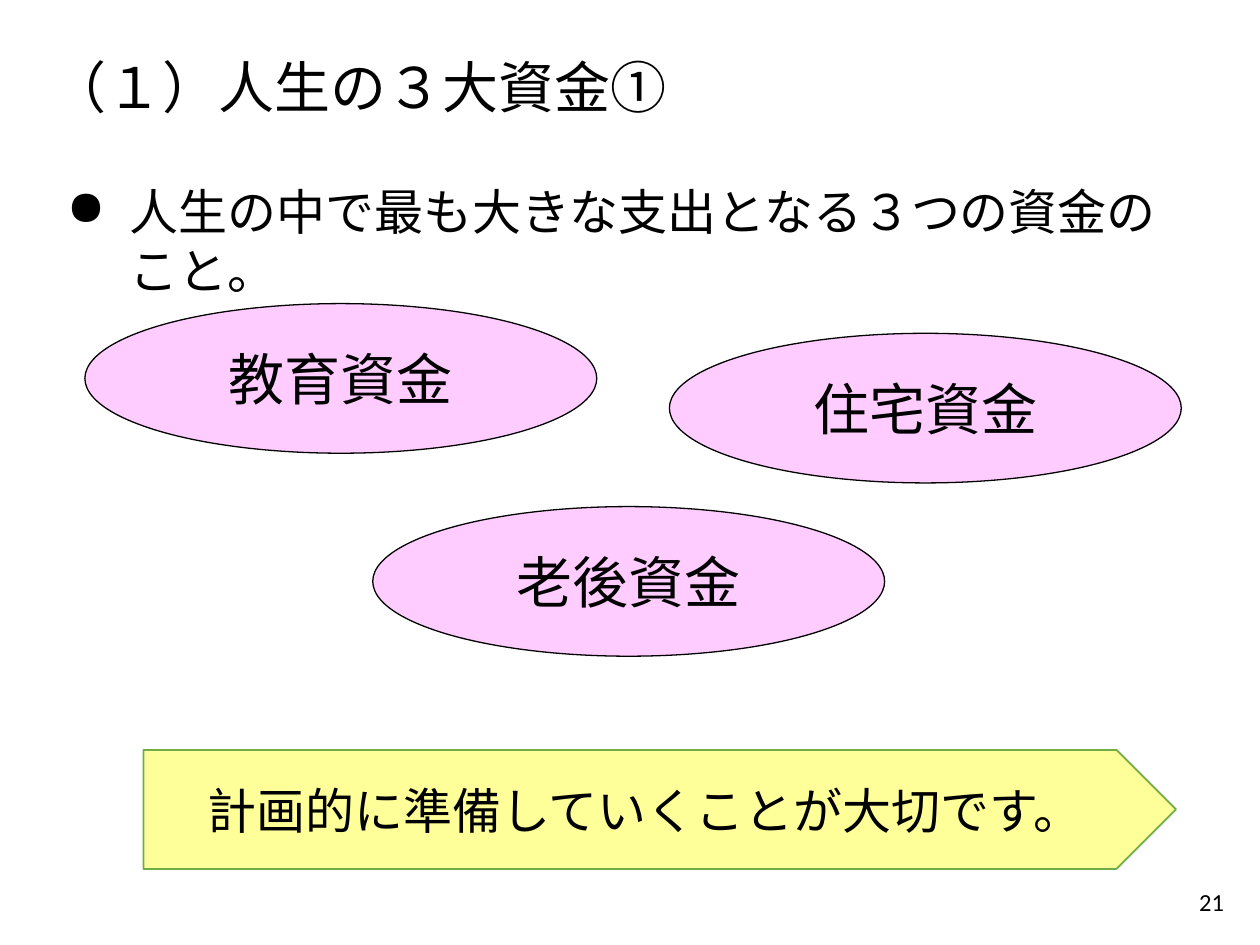
from lxml import etree
from pptx import Presentation
from pptx.dml.color import RGBColor
from pptx.enum.shapes import MSO_SHAPE
from pptx.enum.text import MSO_ANCHOR, MSO_AUTO_SIZE, PP_ALIGN
from pptx.oxml.ns import qn
from pptx.util import Pt

LEFT, CENTER, RIGHT = PP_ALIGN.LEFT, PP_ALIGN.CENTER, PP_ALIGN.RIGHT
TOP, MIDDLE = MSO_ANCHOR.TOP, MSO_ANCHOR.MIDDLE
ELLIPSE, ARROW_BANNER = MSO_SHAPE.OVAL, MSO_SHAPE.PENTAGON
NO_AUTOFIT = MSO_AUTO_SIZE.NONE
TITLE_ONLY = 5

COLORS = {
    "text": "000000",
    "fund": "FFCCFF",
    "fund_line": "000000",
    "banner": "FFFF99",
    "banner_line": "70AD47",
}


def color(name):
    return RGBColor.from_string(COLORS[name])


def write(shape, text, *, size, font="Arial", align=LEFT, anchor=MIDDLE, wrap=True):
    frame = shape.text_frame
    frame.auto_size = NO_AUTOFIT
    frame.word_wrap = wrap
    frame.vertical_anchor = anchor
    paragraph = frame.paragraphs[0]
    paragraph.alignment = align
    run = paragraph.add_run()
    run.text = text
    run.font.size = Pt(size)
    run.font.name = font
    run.font.color.rgb = color("text")
    return paragraph


def add_filled(slide, kind, box, fill, line, line_width):
    shape = slide.shapes.add_shape(kind, *map(Pt, box))
    shape.shadow.inherit = False
    shape.fill.solid()
    shape.fill.fore_color.rgb = color(fill)
    shape.line.color.rgb = color(line)
    shape.line.width = Pt(line_width)
    return shape


def place_title(slide, box, text):
    title = slide.shapes.title
    title.left, title.top, title.width, title.height = map(Pt, box)
    write(title, text, size=32)


def add_definition(slide, box, text, indent=36):
    definition = slide.shapes.add_textbox(*map(Pt, box))
    paragraph = write(definition, text, size=28, anchor=TOP)
    properties = paragraph._p.get_or_add_pPr()
    properties.set("marL", str(Pt(indent)))
    properties.set("indent", str(-Pt(indent)))
    etree.SubElement(properties, qn("a:buChar")).set("char", "●")


def add_funds(slide, box, funds, size=(292.5, 85.5)):
    left, top = box[:2]
    for name, (dx, dy) in funds.items():
        fund = add_filled(slide, ELLIPSE, (left + dx, top + dy, *size),
                          "fund", "fund_line", 0.75)
        write(fund, name, size=32, align=CENTER, wrap=False)


def add_banner(slide, box, text):
    banner = add_filled(slide, ARROW_BANNER, box, "banner", "banner_line", 1)
    write(banner, text, size=28, font="Calibri", align=CENTER)


def add_page_number(slide, box, number):
    page = slide.shapes.add_textbox(*map(Pt, box))
    write(page, number, size=14, font="Calibri", align=RIGHT)


def main():
    deck = Presentation()
    deck.slide_width, deck.slide_height = Pt(720), Pt(540)
    slide = deck.slides.add_slide(deck.slide_layouts[TITLE_ONLY])

    # Heading and definition
    place_title(slide, (21.5, 26, 675, 46), "（１）人生の３大資金①")
    add_definition(slide, (31, 100, 654, 41),
                   "人生の中で最も大きな支出となる３つの資金のこと。")

    # The three funds, as offsets within their region
    add_funds(slide, (48.5, 173.5, 626.5, 201.5), {
        "教育資金": (0, 0),
        "住宅資金": (334, 17),
        "老後資金": (164.5, 116),
    })

    # Conclusion and page number
    add_banner(slide, (82, 428.5, 590, 68), "計画的に準備していくことが大切です。")
    add_page_number(slide, (544.5, 500.5, 162, 29), "21")

    deck.save("out.pptx")


if __name__ == "__main__":
    main()
